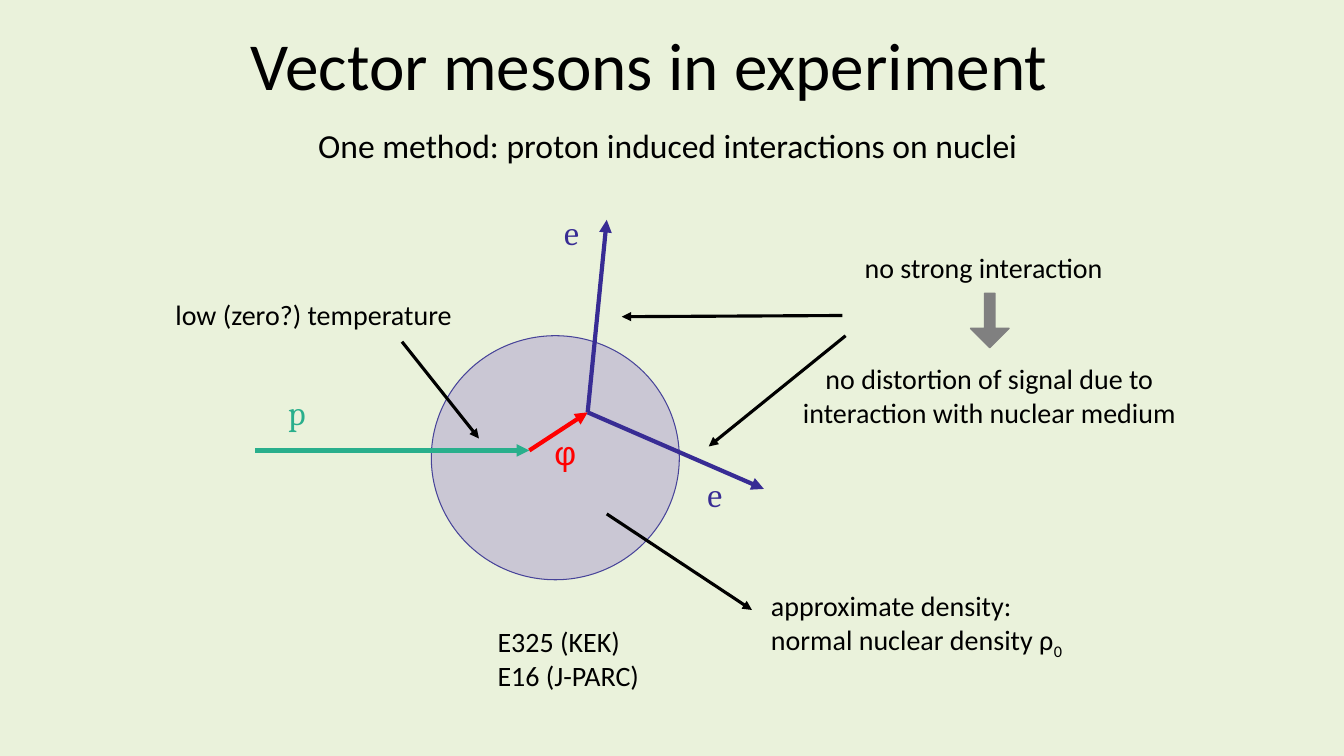
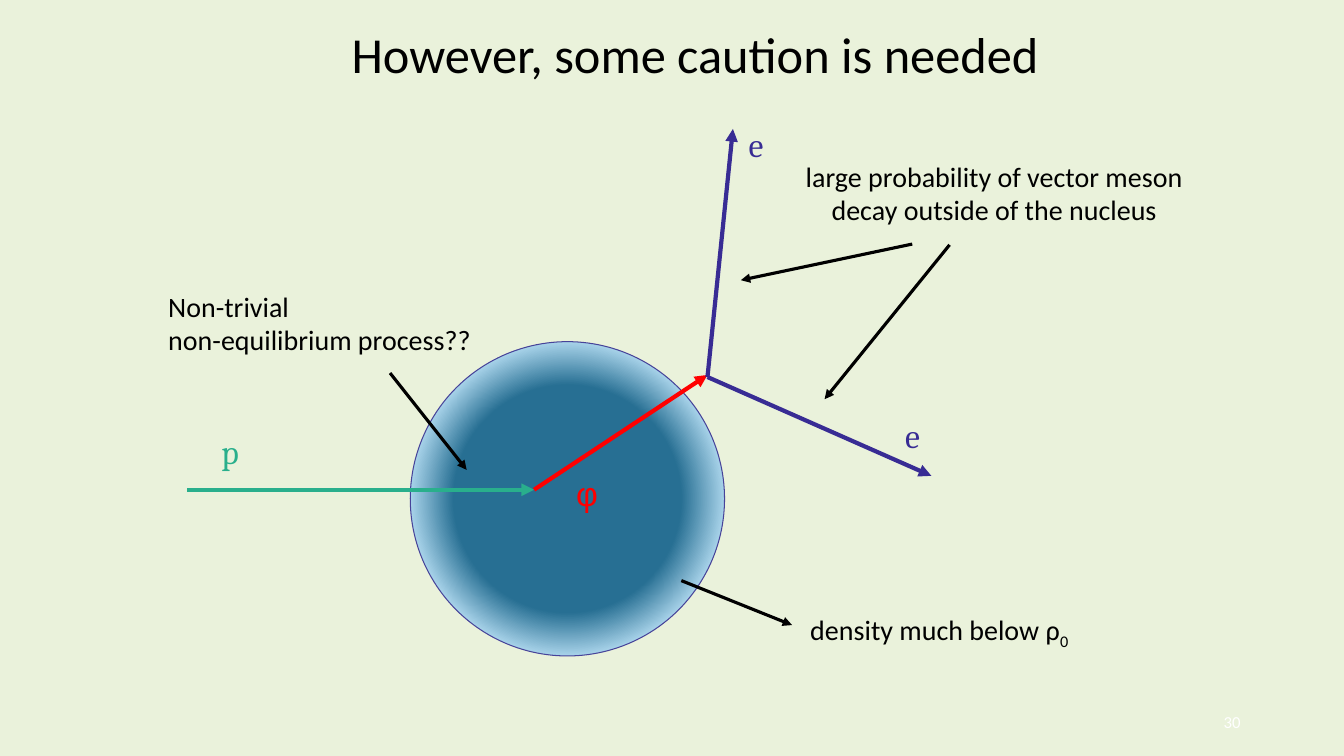
import dataclasses

import lxml.etree
import pptx
import pptx.dml.color
import pptx.enum.shapes
import pptx.enum.text
import pptx.oxml
import pptx.oxml.ns
import pptx.util

Cm = pptx.util.Cm
Pt = pptx.util.Pt
RGB = pptx.dml.color.RGBColor.from_string
LEFT = pptx.enum.text.PP_ALIGN.LEFT
CENTER = pptx.enum.text.PP_ALIGN.CENTER
PRESET = pptx.enum.shapes.MSO_SHAPE
qn = pptx.oxml.ns.qn


@dataclasses.dataclass(frozen=True)
class Theme:
    background: str = "EAF2DB"
    ink: str = "000000"
    proton: str = "29AF8C"
    meson: str = "FF0000"
    electron: str = "382C94"
    nucleus: str = "7C60C6"
    nucleus_alpha: int = 29
    nucleus_edge: str = "474399"
    core: str = "276F93"
    halo: str = "A4D0E7"
    block_arrow: str = "808080"
    page_number: str = "FFFFFF"
    font: str = "Calibri"
    particle_font: str = "Cambria"
    meson_font: str = "Arial"
    subtitle_size: int = 24
    particle_size: int = 24
    note_size: int = 20
    page_number_size: int = 12
    track_width: float = 3
    pointer_width: float = 2.25


theme = Theme()


def add_text(page, text, place, size=theme.note_size, color=theme.ink,
             font=theme.font, align=LEFT, subscript=""):
    box = page.shapes.add_textbox(*map(Cm, place))
    frame = box.text_frame
    frame.word_wrap = True
    frame.text = text
    for para in frame.paragraphs:
        para.alignment = align
        para.font.size = Pt(size)
        para.font.name = font
        para.font.color.rgb = RGB(color)
    if subscript:
        span = frame.paragraphs[-1].add_run()
        span.text = subscript
        span.font._element.set("baseline", "-25000")


def add_arrow(page, start, end, color=theme.ink, width=theme.pointer_width):
    arrow = page.shapes.add_connector(
        pptx.enum.shapes.MSO_CONNECTOR.STRAIGHT, *map(Cm, (*start, *end)))
    arrow.line.color.rgb = RGB(color)
    arrow.line.width = Pt(width)
    line = arrow.line._get_or_add_ln()
    lxml.etree.SubElement(line, qn("a:tailEnd"), type="triangle")
    lxml.etree.SubElement(arrow._element.spPr, qn("a:effectLst"))


diagrams = [
    {
        "title": ("Vector mesons in experiment", (6.07, 0.46, 22.94, 2.31), 48),
        "nucleus": (10.87, 8.46, 6.25, 6.15),
        "tracks": [
            ((6.43, 11.35), (13.34, 11.35), theme.proton),
            ((13.34, 11.35), (14.81, 10.39), theme.meson),
            ((14.81, 10.39), (15.29, 5.54), theme.electron),
            ((14.81, 10.39), (19.25, 12.32), theme.electron),
        ],
        "particles": [
            ("p", (7.01, 9.75), theme.proton, theme.particle_font),
            ("e", (17.58, 11.81), theme.electron, theme.particle_font),
            ("e", (13.97, 5.21), theme.electron, theme.particle_font),
            ("φ", (13.72, 10.77), theme.meson, theme.meson_font),
        ],
        "pointers": [
            ((10.13, 8.61), (12.07, 11.05)),
            ((21.23, 7.95), (15.67, 7.98)),
            ((21.31, 8.46), (17.86, 11.25)),
            ((15.29, 12.95), (18.95, 15.37)),
        ],
        "notes": [
            ("E325 (KEK)\nE16 (J-PARC)", (12.29, 15.62, 5.54, 1.96), LEFT, ""),
            ("low (zero?) temperature", (4.17, 7.37, 9.14, 1.12), LEFT, ""),
            ("no strong interaction", (21.54, 6.2, 9.14, 1.12), LEFT, ""),
            ("no distortion of signal due to interaction with nuclear medium",
             (19.74, 8.99, 10.39, 1.96), CENTER, ""),
            ("approximate density:\vnormal nuclear density ρ",
             (19.18, 14.71, 9.14, 1.96), LEFT, "0"),
        ],
    },
    {
        "title": ("However, some caution is needed", (8.61, 0.46, 18.11, 1.8), 36),
        "nucleus": (10.34, 8.61, 7.92, 7.92),
        "tracks": [
            ((4.72, 12.34), (13.46, 12.34), theme.proton),
            ((13.46, 12.34), (17.83, 9.45), theme.meson),
            ((17.83, 9.5), (18.47, 3.25), theme.electron),
            ((17.83, 9.5), (23.47, 11.99), theme.electron),
        ],
        "particles": [
            ("p", (5.33, 10.74), theme.proton, theme.particle_font),
            ("e", (22.56, 10.34), theme.electron, theme.particle_font),
            ("e", (18.62, 3), theme.electron, theme.particle_font),
            ("φ", (14.27, 11.79), theme.meson, theme.meson_font),
        ],
        "pointers": [
            ((9.83, 9.4), (11.76, 11.84)),
            ((17.17, 14.63), (19.96, 15.75)),
            ((22.99, 6.15), (18.67, 7.06)),
            ((23.93, 6.17), (20.78, 10.06)),
        ],
        "notes": [
            ("Non-trivial\vnon-equilibrium process??",
             (3.99, 7.16, 8.74, 1.96), LEFT, ""),
            ("density much below ρ", (20.17, 15.32, 9.14, 1.12), LEFT, "0"),
            ("large probability of vector meson decay outside of the nucleus",
             (19.86, 3.89, 10.39, 1.96), CENTER, ""),
        ],
    },
]

deck = pptx.Presentation()
deck.slide_width = Cm(33.87)
deck.slide_height = Cm(19.05)
backdrop = deck.slide_master.background.fill
backdrop.solid()
backdrop.fore_color.rgb = RGB(theme.background)

pages = []
nuclei = []
for diagram in diagrams:
    page = deck.slides.add_slide(deck.slide_layouts[6])
    title, title_place, title_size = diagram["title"]
    add_text(page, title, title_place, title_size)

    nucleus = page.shapes.add_shape(PRESET.OVAL, *map(Cm, diagram["nucleus"]))
    nucleus.shadow.inherit = False
    nucleus.line.color.rgb = RGB(theme.nucleus_edge)
    nucleus.line.width = Pt(0.75)

    for start, end, color in diagram["tracks"]:
        add_arrow(page, start, end, color, theme.track_width)
    for symbol, corner, color, font in diagram["particles"]:
        add_text(page, symbol, (*corner, 1.7, 1.27), theme.particle_size, color, font)
    for start, end in diagram["pointers"]:
        add_arrow(page, start, end)
    for text, place, align, subscript in diagram["notes"]:
        add_text(page, text, place, align=align, subscript=subscript)
    pages.append(page)
    nuclei.append(nucleus)

method_page, caution_page = pages
uniform_nucleus, diffuse_nucleus = nuclei

uniform_nucleus.fill.solid()
uniform_nucleus.fill.fore_color.rgb = RGB(theme.nucleus)
tint = uniform_nucleus._element.spPr.find(".//" + qn("a:srgbClr"))
lxml.etree.SubElement(tint, qn("a:alpha"), val=str(theme.nucleus_alpha * 1000))

add_text(method_page, "One method: proton induced interactions on nuclei",
         (7.77, 3.02, 22.05, 1.27), theme.subtitle_size)
block_arrow = method_page.shapes.add_shape(
    PRESET.DOWN_ARROW, Cm(24.46), Cm(7.39), Cm(0.97), Cm(1.37))
block_arrow.adjustments[0] = 0.27
block_arrow.adjustments[1] = 0.5
block_arrow.shadow.inherit = False
block_arrow.fill.solid()
block_arrow.fill.fore_color.rgb = RGB(theme.block_arrow)
block_arrow.line.color.rgb = RGB(theme.block_arrow)
block_arrow.line.width = Pt(1)

diffuse_nucleus.fill.gradient()
stops = diffuse_nucleus.fill.gradient_stops
for stop, position, color in zip(stops, (0.51, 0.7), (theme.core, theme.halo)):
    stop.position = position
    stop.color.rgb = RGB(color)
gradient = diffuse_nucleus._element.spPr.find(qn("a:gradFill"))
gradient.remove(gradient.find(qn("a:lin")))
radial = lxml.etree.SubElement(gradient, qn("a:path"), path="circle")
lxml.etree.SubElement(radial, qn("a:fillToRect"),
                      dict.fromkeys("ltrb", "50000"))

add_text(caution_page, "30", (30.59, 17.8, 1.5, 0.8),
         theme.page_number_size, theme.page_number)

deck.save("out.pptx")
